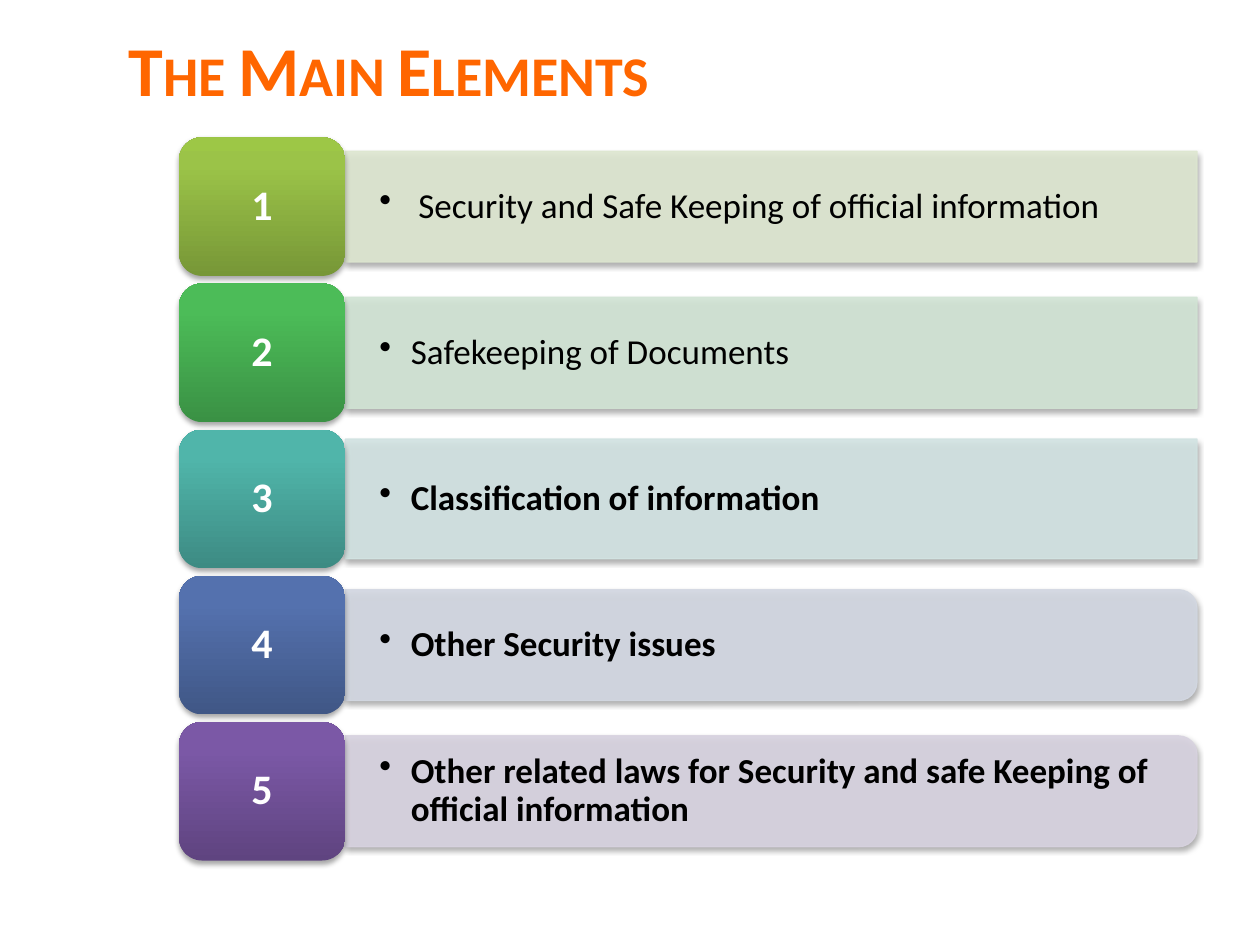
from lxml import etree
from pptx import Presentation
from pptx.dml.color import RGBColor
from pptx.enum.shapes import MSO_SHAPE
from pptx.enum.text import MSO_ANCHOR, PP_ALIGN
from pptx.oxml.ns import qn
from pptx.util import Inches, Pt

RECT, ROUND_END = MSO_SHAPE.RECTANGLE, MSO_SHAPE.ROUND_2_SAME_RECTANGLE
BADGE = MSO_SHAPE.ROUNDED_RECTANGLE
MIDDLE = MSO_ANCHOR.MIDDLE
LEFT, CENTER = PP_ALIGN.LEFT, PP_ALIGN.CENTER

TITLE = "The Main Elements"
ELEMENTS = [
    ("Security and Safe Keeping of official information", False, RECT, 0.88, 0.31,
     "DEE7D1", ("779737", "9BC348", "9DC746")),
    ("Safekeeping of Documents", False, RECT, 0.88, 0.25,
     "D2E5D5", ("3A9144", "4CBC58", "4ABF57")),
    ("Classification of information", True, RECT, 0.95, 0.25,
     "D2E3E2", ("3D8B83", "50B5AA", "4EB8AC")),
    ("Other Security issues", True, ROUND_END, 0.88, 0.25,
     "D3D8E2", ("405786", "5471AE", "5271B0")),
    ("Other related laws for Security and safe Keeping of official information",
     True, ROUND_END, 0.88, 0.25, "D8D3E0", ("5F4480", "7B58A6", "7C57A8")),
]
STOPS = (0, 80, 100)
TOP, PITCH = 1.09, 1.16
BADGE_X, BADGE_W, BADGE_H = 1.42, 1.32, 1.1
BAR_X, BAR_W, TEXT_W = 2.74, 6.76, 6.71


def rgb(value):
    return RGBColor.from_string(value)


def sub(parent, tag, **attrs):
    return etree.SubElement(parent, qn(tag), attrs)


def add_shadow(sp):
    sp.shadow.inherit = False
    effects = sp._element.spPr.find(qn("a:effectLst"))
    shadow = sub(effects, "a:outerShdw", blurRad=str(Pt(3.1)), dist=str(Pt(1.8)),
                 dir="5400000", rotWithShape="0")
    color = sub(shadow, "a:srgbClr", val="000000")
    sub(color, "a:alpha", val="35000")


def set_text(p, text, size, color, bold, align):
    p.text = text
    p.alignment = align
    p.font.name, p.font.size, p.font.bold = "Calibri", Pt(size), bold
    p.font.color.rgb = rgb(color)


def add_bar(s, kind, middle, height, color):
    """Add a bar turned a quarter so that its rounded end faces right."""
    sp = s.shapes.add_shape(kind, Inches(BAR_X + (BAR_W - height) / 2),
                            Inches(middle - BAR_W / 2), Inches(height), Inches(BAR_W))
    sp.rotation = 90
    sp.fill.solid()
    sp.fill.fore_color.rgb = rgb(color)
    sp.line.color.rgb = rgb(color)
    sp.line.width = Pt(0.75)
    for clr in sp._element.spPr.iter(qn("a:srgbClr")):
        sub(clr, "a:alpha", val="90000")
    add_shadow(sp)


def add_label(s, text, bold, middle, height, indent):
    box = s.shapes.add_textbox(Inches(BAR_X), Inches(middle - height / 2),
                               Inches(TEXT_W), Inches(height))
    tf = box.text_frame
    tf.word_wrap = True
    tf.vertical_anchor = MIDDLE
    tf.margin_left = tf.margin_right = Inches(0.27)
    tf.margin_top = tf.margin_bottom = Inches(0.14)
    p = tf.paragraphs[0]
    p.line_spacing = 0.9
    pPr = p._p.get_or_add_pPr()
    pPr.set("marL", str(Inches(indent)))
    pPr.set("indent", str(-Inches(indent)))
    sub(pPr, "a:buChar", char="•")
    set_text(p, text, 20, "000000", bold, LEFT)


def add_badge(s, number, middle, colors):
    sp = s.shapes.add_shape(BADGE, Inches(BADGE_X), Inches(middle - BADGE_H / 2),
                            Inches(BADGE_W), Inches(BADGE_H))
    sp.fill.gradient()
    sp.fill.gradient_angle = 90
    stops = sp._element.spPr.find(".//" + qn("a:gsLst"))
    stops.clear()
    for pos, color in zip(STOPS, colors):
        sub(sub(stops, "a:gs", pos=str(pos * 1000)), "a:srgbClr", val=color)
    sp.line.fill.background()
    add_shadow(sp)
    tf = sp.text_frame
    tf.vertical_anchor = MIDDLE
    p = tf.paragraphs[0]
    p.line_spacing = 0.9
    set_text(p, str(number), 24, "FFFFFF", True, CENTER)


def main():
    prs = Presentation()
    prs.slide_width, prs.slide_height = Inches(10), Inches(7.5)
    s = prs.slides.add_slide(prs.slide_layouts[5])

    title = s.shapes.title
    title.left, title.top = Inches(0.92), Inches(-0.08)
    title.width, title.height = Inches(8.83), Inches(1.25)
    title.text_frame.vertical_anchor = MIDDLE
    p = title.text_frame.paragraphs[0]
    set_text(p, TITLE, 40, "FF6600", True, LEFT)
    p.runs[0]._r.get_or_add_rPr().set("cap", "small")

    for i, (text, bold, kind, height, indent, tint, colors) in enumerate(ELEMENTS):
        middle = TOP + i * PITCH + BADGE_H / 2
        add_bar(s, kind, middle, height, tint)
        add_label(s, text, bold, middle, height, indent)
        add_badge(s, i + 1, middle, colors)

    prs.save("out.pptx")


if __name__ == "__main__":
    main()
